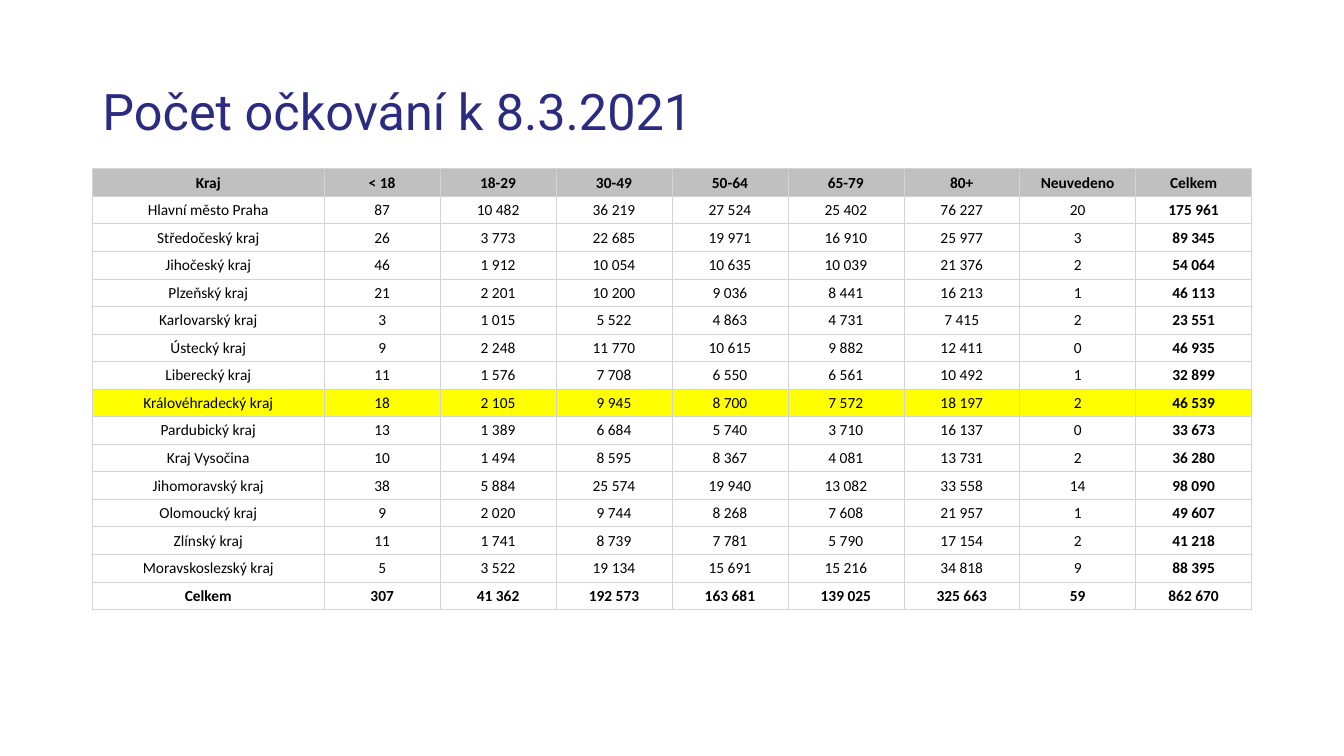
import pptx
import pptx.dml.color
import pptx.enum.text
import pptx.oxml
import pptx.oxml.ns
import pptx.util

PX = 6350
COLORS = {
    "title": "2B2B82",
    "text": "000000",
    "header": "C0C0C0",
    "highlight": "FFFF00",
    "plain": "FFFFFF",
    "border": "D3D3D3",
}
TITLE_BOX = (132, 58, 1656, 209)
TABLE_BOX = (132, 241, 1656, 630)
TITLE_FONT = {"name": "Roboto", "size": pptx.util.Pt(36), "bold": False}
CELL_FONT = {"name": "Calibri", "size": pptx.util.Pt(11)}
CELL_FORMAT = {
    "margin_left": PX,
    "margin_top": PX,
    "margin_right": PX,
    "margin_bottom": 0,
    "vertical_anchor": pptx.enum.text.MSO_ANCHOR.MIDDLE,
}
HEADINGS = ("Kraj", "< 18", "18-29", "30-49", "50-64", "65-79", "80+", "Neuvedeno", "Celkem")
HIGHLIGHTED_REGION = "Královéhradecký kraj"
VACCINATIONS = (
    ("Hlavní město Praha", 87, 10482, 36219, 27524, 25402, 76227, 20, 175961),
    ("Středočeský kraj", 26, 3773, 22685, 19971, 16910, 25977, 3, 89345),
    ("Jihočeský kraj", 46, 1912, 10054, 10635, 10039, 21376, 2, 54064),
    ("Plzeňský kraj", 21, 2201, 10200, 9036, 8441, 16213, 1, 46113),
    ("Karlovarský kraj", 3, 1015, 5522, 4863, 4731, 7415, 2, 23551),
    ("Ústecký kraj", 9, 2248, 11770, 10615, 9882, 12411, 0, 46935),
    ("Liberecký kraj", 11, 1576, 7708, 6550, 6561, 10492, 1, 32899),
    ("Královéhradecký kraj", 18, 2105, 9945, 8700, 7572, 18197, 2, 46539),
    ("Pardubický kraj", 13, 1389, 6684, 5740, 3710, 16137, 0, 33673),
    ("Kraj Vysočina", 10, 1494, 8595, 8367, 4081, 13731, 2, 36280),
    ("Jihomoravský kraj", 38, 5884, 25574, 19940, 13082, 33558, 14, 98090),
    ("Olomoucký kraj", 9, 2020, 9744, 8268, 7608, 21957, 1, 49607),
    ("Zlínský kraj", 11, 1741, 8739, 7781, 5790, 17154, 2, 41218),
    ("Moravskoslezský kraj", 5, 3522, 19134, 15691, 15216, 34818, 9, 88395),
    ("Celkem", 307, 41362, 192573, 163681, 139025, 325663, 59, 862670),
)


def set_attributes(target, values):
    """Set every attribute named in a dict of format values."""
    for name, value in values.items():
        setattr(target, name, value)


def rgb(name):
    """Return the named colour."""
    return pptx.dml.color.RGBColor.from_string(COLORS[name])


def add_borders(cell):
    """Draw a thin line on all four sides of a cell."""
    properties = cell._tc.get_or_add_tcPr()
    for position, side in enumerate(("lnL", "lnR", "lnT", "lnB")):
        line = pptx.oxml.parse_xml(
            f'<a:{side} {pptx.oxml.ns.nsdecls("a")} w="{PX}"><a:solidFill>'
            f'<a:srgbClr val="{COLORS["border"]}"/></a:solidFill></a:{side}>'
        )
        properties.insert(position, line)


def write_cell(cell, value, fill, bold):
    """Fill one table cell with a centred label or number."""
    set_attributes(cell, CELL_FORMAT)
    cell.text = value if isinstance(value, str) else f"{value:,}".replace(",", " ")
    paragraph = cell.text_frame.paragraphs[0]
    paragraph.alignment = pptx.enum.text.PP_ALIGN.CENTER
    font = paragraph.runs[0].font
    set_attributes(font, {**CELL_FONT, "bold": bold})
    font.color.rgb = rgb("text")
    cell.fill.solid()
    cell.fill.fore_color.rgb = rgb(fill)
    add_borders(cell)


def add_title(slide, box):
    """Place and format the title placeholder in the box."""
    title = slide.shapes.title
    left, top, width, height = (length * PX for length in box)
    set_attributes(title, {"left": left, "top": top, "width": width, "height": height})
    frame = title.text_frame
    frame.text = "Počet očkování k 8.3.2021"
    frame.auto_size = pptx.enum.text.MSO_AUTO_SIZE.NONE
    frame.vertical_anchor = pptx.enum.text.MSO_ANCHOR.MIDDLE
    paragraph = frame.paragraphs[0]
    set_attributes(paragraph, {"alignment": pptx.enum.text.PP_ALIGN.LEFT, "line_spacing": 0.9})
    font = paragraph.runs[0].font
    set_attributes(font, TITLE_FONT)
    font.color.rgb = rgb("title")


def add_vaccination_table(slide, box):
    """Place the table in the box, its first column twice as wide as the others."""
    rows = (HEADINGS, *VACCINATIONS)
    left, top, width, height = (length * PX for length in box)
    shape = slide.shapes.add_table(len(rows), len(HEADINGS), left, top, width, height)
    table = shape.table
    set_attributes(table, {"first_row": False, "horz_banding": False})
    unit = width // (len(HEADINGS) + 1)
    for index, column in enumerate(table.columns):
        column.width = unit * 2 if index == 0 else unit
    for row in table.rows:
        row.height = height // len(rows)
    fills = {HEADINGS[0]: "header", HIGHLIGHTED_REGION: "highlight"}
    for row_index, values in enumerate(rows):
        fill = fills.get(values[0], "plain")
        for column_index, value in enumerate(values):
            bold = row_index in (0, len(rows) - 1) or column_index == len(HEADINGS) - 1
            write_cell(table.cell(row_index, column_index), value, fill, bold)


def main():
    """Build the slide and save the presentation."""
    presentation = pptx.Presentation()
    set_attributes(presentation, {"slide_width": 1920 * PX, "slide_height": 1080 * PX})
    slide = presentation.slides.add_slide(presentation.slide_layouts.get_by_name("Title Only"))
    add_title(slide, TITLE_BOX)
    add_vaccination_table(slide, TABLE_BOX)
    presentation.save("out.pptx")


if __name__ == "__main__":
    main()
